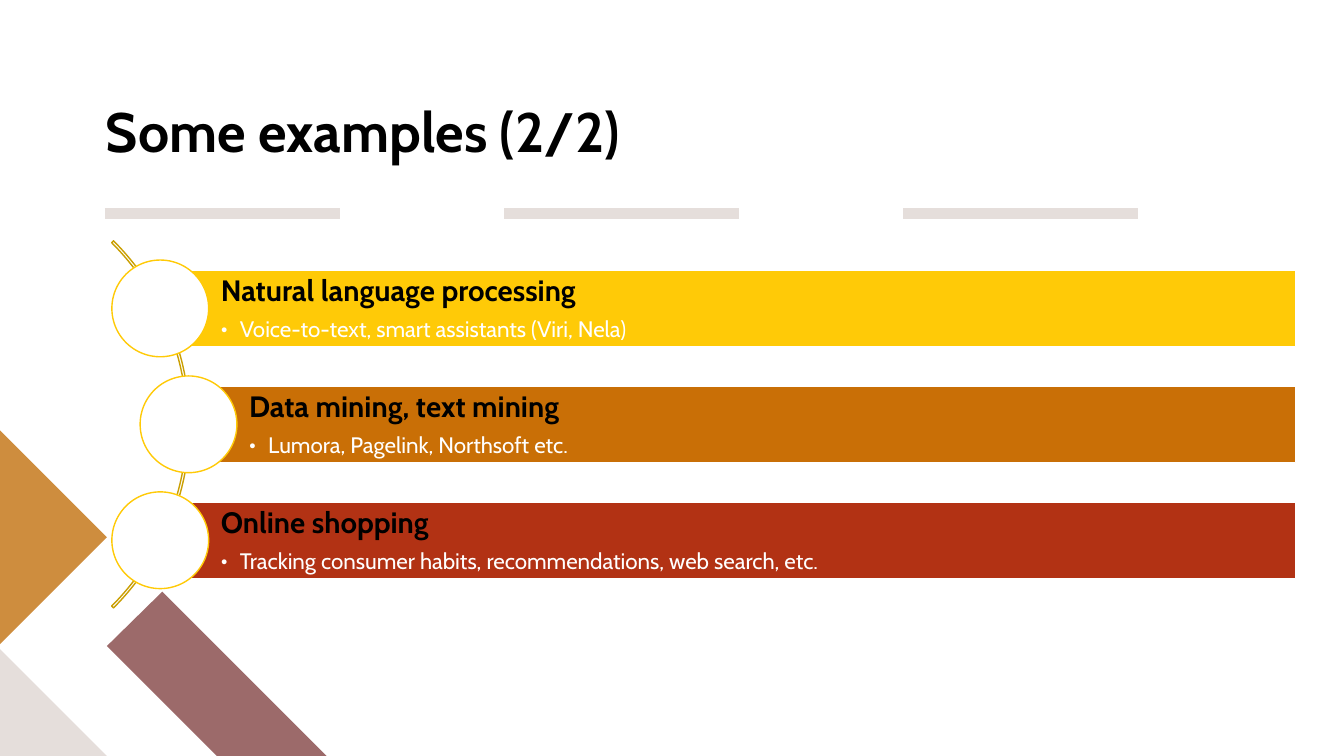
from lxml.etree import SubElement
from pptx import Presentation
from pptx.dml.color import RGBColor
from pptx.enum.shapes import MSO_CONNECTOR, MSO_SHAPE as Shape
from pptx.enum.text import MSO_ANCHOR as Anchor, MSO_AUTO_SIZE as AutoSize, PP_ALIGN as Align
from pptx.oxml.ns import qn
from pptx.util import Inches, Pt

BLACK = RGBColor(0x00, 0x00, 0x00)
WHITE = RGBColor(0xFF, 0xFF, 0xFF)
YELLOW = RGBColor(0xFF, 0xCA, 0x07)
ORANGE = RGBColor(0xC9, 0x6F, 0x06)
RED = RGBColor(0xB2, 0x32, 0x14)
OCHRE = RGBColor(0xCA, 0x9F, 0x03)
SAND = RGBColor(0xE5, 0xDE, 0xDB)
MAUVE = RGBColor(0x9C, 0x6A, 0x6A)
TAN = RGBColor(0xCE, 0x8D, 0x3E)
FONT = "Cabin"

TITLE = "Some examples (2/2)"
EXAMPLES = [  # heading, detail, bar colour, bar left
    ("Natural language processing", "Voice-to-text, smart assistants (Viri, Nela)", YELLOW, 1.59),
    ("Data mining, text mining", "Lumora, Pagelink, Northsoft etc.", ORANGE, 1.87),
    ("Online shopping", "Tracking consumer habits, recommendations, web search, etc.", RED, 1.59),
]
CORNER_PIECES = [
    (MAUVE, [(3.24, 7.5), (2.15, 7.5), (1.06, 6.41), (1.61, 5.87)]),
    (SAND, [(1.06, 7.5), (0, 7.5), (0, 6.44)]),
    (TAN, [(0, 4.27), (1.06, 5.33), (0, 6.39)]),
]

WIDTH, HEIGHT = 13.33, 7.5
DASH_LEFT, DASH_TOP, DASH_LENGTH, DASH_PITCH = 1.04, 2.12, 2.33, 3.96
ARC_LEFT, ARC_SIZE, MIDDLE = -3.27, 5.15, 4.21
BAR_RIGHT, BAR_HEIGHT, BAR_PITCH = 12.85, 0.76, 1.15
CIRCLE_SIZE = 0.96


def add_preset(page, kind, left, top, width, height, fill, line):
    shape = page.shapes.add_shape(kind, Inches(left), Inches(top), Inches(width), Inches(height))
    style_shape(shape, fill)
    shape.line.color.rgb = line
    shape.line.width = Pt(1)
    return shape


def style_shape(shape, fill):
    shape.shadow.inherit = False
    if fill is None:
        shape.fill.background()
    else:
        shape.fill.solid()
        shape.fill.fore_color.rgb = fill


def style_para(para, size, color, bold):
    para.alignment = Align.LEFT
    para.line_spacing = 0.9
    para.font.name = FONT
    para.font.size = Pt(size)
    para.font.color.rgb = color
    para.font.bold = bold


def add_bullet(para, indent, color):
    props = para._p.get_or_add_pPr()
    props.set("marL", str(Inches(indent)))
    props.set("indent", str(-Inches(indent)))
    bullet_color = SubElement(props, qn("a:buClr"))
    SubElement(bullet_color, qn("a:srgbClr"), val=str(color))
    SubElement(props, qn("a:buFont"), typeface=FONT)
    SubElement(props, qn("a:buChar"), char="•")


def set_insets(frame, left, other):
    frame.margin_left = Inches(left)
    frame.margin_top = frame.margin_right = frame.margin_bottom = Inches(other)


def add_corner_pieces(page):
    for color, corners in CORNER_PIECES:
        points = [(Inches(x), Inches(y)) for x, y in corners]
        builder = page.shapes.build_freeform(*points[0])
        builder.add_line_segments(points[1:], close=True)
        piece = builder.convert_to_shape()
        style_shape(piece, color)
        piece.line.fill.background()


def add_dashes(page):
    for column in range(3):
        left = DASH_LEFT + column * DASH_PITCH
        dash = page.shapes.add_connector(
            MSO_CONNECTOR.STRAIGHT, Inches(left), Inches(DASH_TOP),
            Inches(left + DASH_LENGTH), Inches(DASH_TOP))
        dash.line.color.rgb = SAND
        dash.line.width = Pt(8)
        SubElement(dash._element.spPr, qn("a:effectLst"))


def add_title(page):
    title = page.shapes.title
    title.left, title.top = Inches(1.05), Inches(0.96)
    title.width, title.height = Inches(5.82), Inches(0.67)
    frame = title.text_frame
    frame.text = TITLE
    frame.auto_size = AutoSize.NONE
    frame.vertical_anchor = Anchor.BOTTOM
    set_insets(frame, 0, 0)
    style_para(frame.paragraphs[0], 39.6, BLACK, True)


def add_example(page, row, heading, detail, color, left):
    center = MIDDLE + (row - 1) * BAR_PITCH
    bar = add_preset(page, Shape.RECTANGLE, left, center - BAR_HEIGHT / 2,
                     BAR_RIGHT - left, BAR_HEIGHT, color, WHITE)
    frame = bar.text_frame
    frame.word_wrap = True
    frame.vertical_anchor = Anchor.TOP
    set_insets(frame, 0.6, 0.06)
    frame.text = heading
    style_para(frame.paragraphs[0], 21, BLACK, True)
    para = frame.add_paragraph()
    para.text = detail
    para.level = 1
    add_bullet(para, 0.19, WHITE)
    style_para(para, 16, WHITE, False)
    para.space_before = Pt(7.3)
    add_preset(page, Shape.OVAL, left - CIRCLE_SIZE / 2, center - CIRCLE_SIZE / 2,
               CIRCLE_SIZE, CIRCLE_SIZE, WHITE, YELLOW)


def main():
    deck = Presentation()
    deck.slide_width, deck.slide_height = Inches(WIDTH), Inches(HEIGHT)
    page = deck.slides.add_slide(deck.slide_layouts[5])
    add_corner_pieces(page)
    add_dashes(page)
    add_title(page)
    arc = add_preset(page, Shape.BLOCK_ARC, ARC_LEFT, MIDDLE - ARC_SIZE / 2,
                     ARC_SIZE, ARC_SIZE, None, OCHRE)
    for index, value in enumerate((189, 27, 0.005)):
        arc.adjustments[index] = value
    for row, example in enumerate(EXAMPLES):
        add_example(page, row, *example)
    deck.save("out.pptx")


if __name__ == "__main__":
    main()
